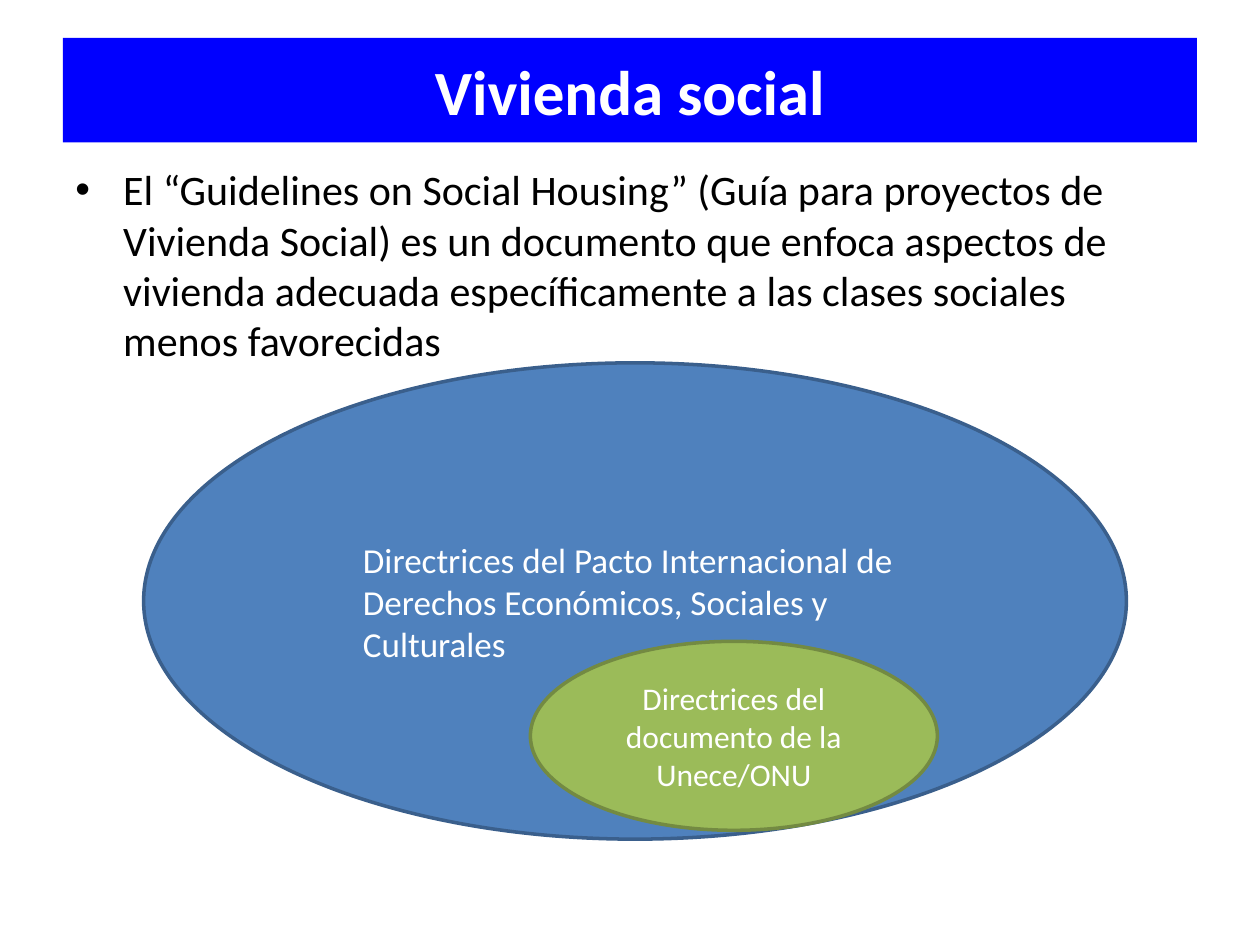
from dataclasses import dataclass

from lxml import etree
from pptx import Presentation
from pptx import util as u
from pptx.dml.color import RGBColor
from pptx.enum import shapes, text
from pptx.oxml.ns import qn

WIDTH, HEIGHT = u.Inches(10), u.Inches(7.5)


@dataclass(frozen=True)
class Theme:
    font: str = "Calibri"
    ink: str = "000000"
    light: str = "FFFFFF"
    banner: str = "0000FF"
    covenant: str = "4F81BD"
    covenant_edge: str = "3A5F8C"
    guidelines: str = "9BBB59"
    guidelines_edge: str = "738A42"
    title_size: int = 36
    body_size: int = 24
    covenant_size: int = 20
    guidelines_size: int = 18
    edge_width: int = 2


THEME = Theme()


def place(left, top, width, height):
    """Turn inches on the slide grid into shares of the slide's size."""
    return (int(WIDTH * left / 10), int(HEIGHT * top / 7.5),
            int(WIDTH * width / 10), int(HEIGHT * height / 7.5))


def write(holder, wording, size, color, align, bold=False, indent=0, bullet=None):
    frame = holder.text_frame
    frame.word_wrap = True
    paragraph = frame.paragraphs[0]
    paragraph.alignment = align
    if indent:
        props = paragraph._p.get_or_add_pPr()
        props.set("marL", str(u.Inches(indent)))
        props.set("indent", str(-u.Inches(indent) if bullet else 0))
        if bullet:
            etree.SubElement(props, qn("a:buFont"), typeface="Arial")
            etree.SubElement(props, qn("a:buChar"), char=bullet)
    run = paragraph.add_run()
    run.text = wording
    run.font.name = THEME.font
    run.font.size = u.Pt(size)
    run.font.bold = bold
    run.font.color.rgb = RGBColor.from_string(color)


def add_panel(slide, kind, box, fill, edge=None):
    panel = slide.shapes.add_shape(kind, *box)
    panel.shadow.inherit = False
    panel.fill.solid()
    panel.fill.fore_color.rgb = RGBColor.from_string(fill)
    if edge:
        panel.line.color.rgb = RGBColor.from_string(edge)
        panel.line.width = u.Pt(THEME.edge_width)
    else:
        panel.line.fill.background()
    panel.text_frame.vertical_anchor = text.MSO_ANCHOR.MIDDLE
    return panel


def main():
    deck = Presentation()
    deck.slide_width, deck.slide_height = WIDTH, HEIGHT
    slide = deck.slides.add_slide(deck.slide_layouts[6])
    left, center = text.PP_ALIGN.LEFT, text.PP_ALIGN.CENTER
    oval = shapes.MSO_SHAPE.OVAL

    # Title banner
    banner = add_panel(slide, shapes.MSO_SHAPE.RECTANGLE,
                       place(0.5, 0.3, 9, 0.83), THEME.banner)
    write(banner, "Vivienda social", THEME.title_size, THEME.light, center, bold=True)

    # Introductory bullet
    intro = slide.shapes.add_textbox(*place(0.5, 1.25, 9, 5.49))
    write(intro,
          "El “Guidelines on Social Housing” (Guía para proyectos de Vivienda Social) "
          "es un documento que enfoca aspectos de vivienda adecuada específicamente "
          "a las clases sociales menos favorecidas",
          THEME.body_size, THEME.ink, left, indent=0.38, bullet="•")

    # Covenant directives, with the narrower guidelines inside
    covenant = add_panel(slide, oval, place(1.14, 2.88, 7.8, 3.78),
                         THEME.covenant, THEME.covenant_edge)
    write(covenant,
          "Directrices del Pacto Internacional de Derechos Económicos, Sociales y Culturales",
          THEME.covenant_size, THEME.light, left, indent=0.5)

    guidelines = add_panel(slide, oval, place(4.21, 5.09, 3.23, 1.5),
                           THEME.guidelines, THEME.guidelines_edge)
    write(guidelines, "Directrices del documento de la Unece/ONU",
          THEME.guidelines_size, THEME.light, center)

    deck.save("out.pptx")


if __name__ == "__main__":
    main()
